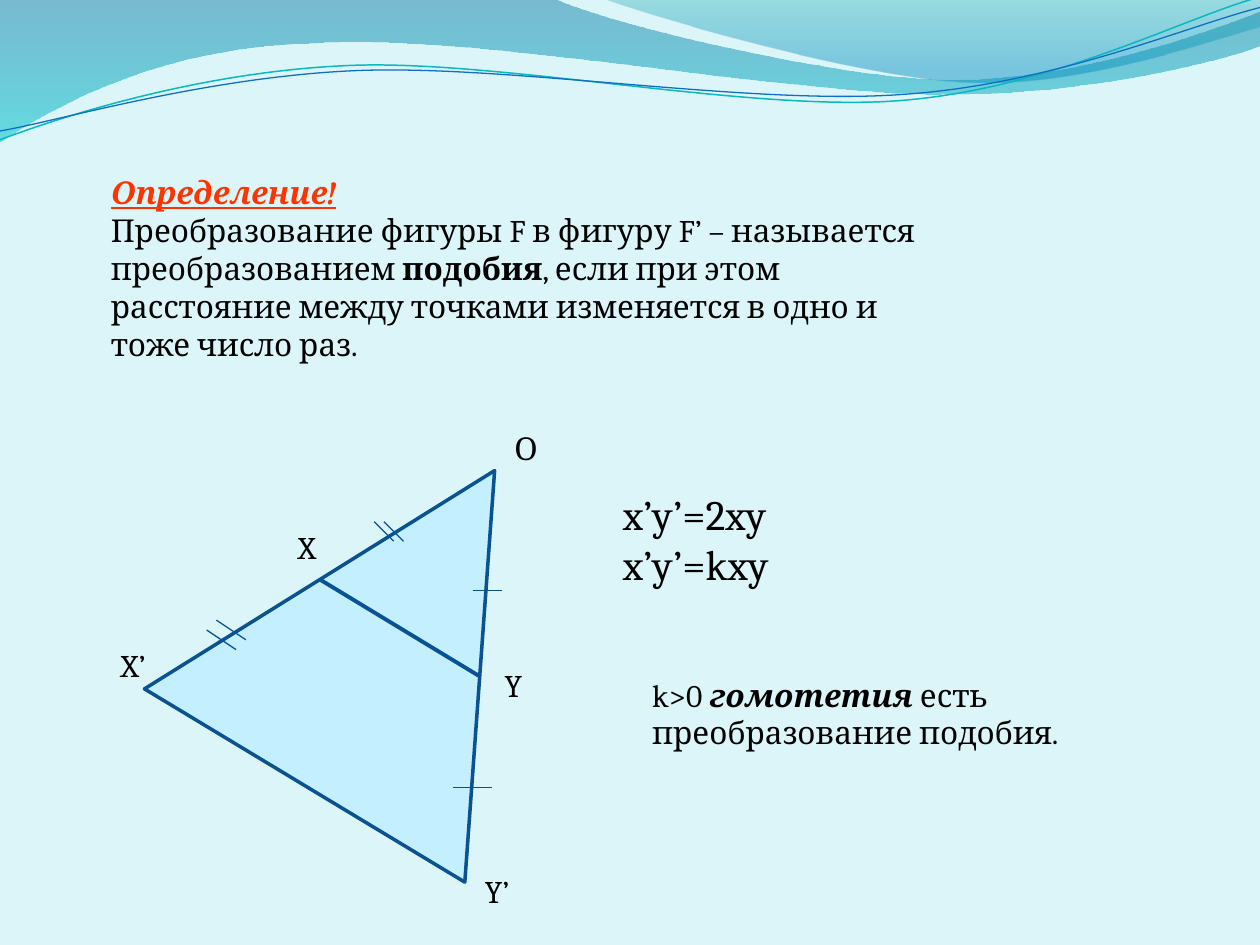
from typing import NamedTuple

from lxml.etree import SubElement
from pptx import Presentation
from pptx.dml.color import RGBColor
from pptx.enum.shapes import MSO_CONNECTOR, MSO_SHAPE
from pptx.oxml.ns import qn
from pptx.util import Pt

COLORS = {
    "background": "DBF5F9", "text": "000000", "accent": "FF3300",
    "triangle": "C4EFFF", "outline": "0B5292", "mark": "095295",
    "teal": "0AB8BF", "blue": "0F6FC6",
    "band_top": "0074A1", "band_bottom": "00C6CF",
    "crest_top": "00A1A9", "crest_bottom": "008BBF",
}


class Stop(NamedTuple):
    position: float
    color: str
    opacity: int


class Wave(NamedTuple):
    start: tuple
    segments: list
    stops: tuple = ()
    color: str = ""
    weight: float = 0
    rotation: float = 0


class Mark(NamedTuple):
    x: float
    y: float
    dx: float
    dy: float
    weight: float = 0.75
    count: int = 1
    step: tuple = (0, 0)


class Span(NamedTuple):
    text: str
    bold: bool = False
    italic: bool = False
    underline: bool = False
    color: str = "text"


class Caption(NamedTuple):
    box: tuple
    paragraphs: list
    size: float = 18


WAVES = [
    Wave((0, 0), [
        (316.8, -0.7),
        (342.7, 12.2, 478.1, 45.4, 545.8, 45.4),
        (614.2, 45.4, 689.8, 18.7, 720, 6.5),
        (720.7, 25.9),
        (707.8, 31.7, 626.4, 54.7, 537.1, 54),
        (447.8, 54, 275, 20.2, 185, 24.5),
        (92.2, 25.9, 33.1, 59.8, -0.7, 81.4),
        (0, 0),
    ], stops=(Stop(0, "band_top", 45), Stop(1, "band_bottom", 55))),
    Wave((344.9, -0.7), [
        (366.5, 7.9, 491, 44.6, 553.7, 46.8),
        (616.3, 49.7, 691.9, 23, 720, 15.1),
        (720, 0),
        (344.9, -0.7),
    ], stops=(Stop(0, "crest_top", 30), Stop(0.8, "crest_bottom", 45))),
    Wave((-1.4, 62.9), [
        (33.7, 51.6, 114, 29.4, 199.8, 29.9),
        (284.8, 30.3, 425.8, 67.2, 512.4, 64.8),
        (599, 62.4, 676.4, 25.7, 720.2, 15.6),
    ], color="teal", weight=0.85, rotation=357.3),
    Wave((-1.2, 57.9), [
        (33, 53.7, 118.3, 32.5, 204, 33),
        (290.5, 33.5, 428.9, 63.8, 515.5, 61.3),
        (601.4, 59.6, 678.5, 30.1, 721.4, 21.3),
    ], color="blue", weight=0.75, rotation=357.3),
]
MARKS = [
    Mark(182.9, 331.2, 91.4, 55.4, weight=2.25),
    Mark(213.8, 298.1, 11.2, 11.2, count=2, step=(5.6, 0)),
    Mark(118.1, 360, 16.8, 11.2, count=2, step=(5.6, -5.6)),
    Mark(270, 337.5, 16.8, 0),
    Mark(258.8, 450, 22.5, 0),
]
CAPTIONS = [
    Caption((56.2, 95.5, 483.8, 94.3), [
        [Span("Определение!", True, True, True, "accent")],
        [Span("Преобразование фигуры F в фигуру F’ – называется преобразованием "),
         Span("подобия", bold=True),
         Span(", если при этом расстояние между точками изменяется в одно и тоже число раз.")],
    ]),
    Caption((286.9, 241.9, 39.4, 28.8), [[Span("О")]]),
    Caption((270, 495, 33.8, 28.8), [[Span("Y’")]]),
    Caption((281.3, 376.9, 33.8, 28.8), [[Span("Y")]]),
    Caption((163.2, 298.1, 28.2, 28.8), [[Span("X")]]),
    Caption((61.9, 365.6, 39.4, 28.8), [[Span("X’")]]),
    Caption((348.8, 275.6, 202.3, 87.1),
            [[Span("x’y’=2xy")], [Span("x’y’=kxy")]], size=24),
    Caption((365.6, 382.5, 247.7, 51.1), [
        [Span("k>0 "), Span("гомотетия", True, True), Span(" есть преобразование подобия.")],
    ]),
]


def rgb(name: str) -> RGBColor:
    """Look up a palette colour."""
    return RGBColor.from_string(COLORS[name])


def bend(outline, segments: list) -> None:
    """Merge each three straight steps of a cubic segment into one curve."""
    steps = iter(list(outline.element.iter(qn("a:lnTo"))))
    for segment in segments:
        curve = next(steps)
        if len(segment) == 2:
            continue
        curve.tag = qn("a:cubicBezTo")
        for step in (next(steps), next(steps)):
            curve.append(step[0])
            step.getparent().remove(step)


def draw_wave(shapes, wave: Wave) -> None:
    """Draw a gradient band or a thin curve."""
    points = [(Pt(x), Pt(y)) for segment in wave.segments
              for x, y in zip(segment[::2], segment[1::2])]
    builder = shapes.build_freeform(*map(Pt, wave.start))
    builder.add_line_segments(points, close=bool(wave.stops))
    outline = builder.convert_to_shape()
    bend(outline, wave.segments)
    outline.rotation = wave.rotation
    outline.shadow.inherit = False
    if not wave.stops:
        outline.fill.background()
        outline.line.color.rgb = rgb(wave.color)
        outline.line.width = Pt(wave.weight)
        return
    outline.line.fill.background()
    outline.fill.gradient()
    outline.fill.gradient_angle = 270
    for target, stop in zip(outline.fill.gradient_stops, wave.stops):
        target.position = stop.position
        target.color.rgb = rgb(stop.color)
    for color, stop in zip(outline.element.spPr.iter(qn("a:srgbClr")), wave.stops):
        SubElement(color, qn("a:alpha")).set("val", str(stop.opacity * 1000))


def draw_triangle(shapes) -> None:
    """Draw the triangle with vertices O, X’ and Y’."""
    triangle = shapes.add_shape(MSO_SHAPE.ISOSCELES_TRIANGLE,
                                Pt(121.5), Pt(253.8), Pt(213.8), Pt(210.2))
    triangle.rotation = 31.1
    triangle.shadow.inherit = False
    triangle.fill.solid()
    triangle.fill.fore_color.rgb = rgb("triangle")
    triangle.line.color.rgb = rgb("outline")
    triangle.line.width = Pt(2)


def draw_mark(shapes, mark: Mark) -> None:
    """Draw a line, repeated at an even step."""
    for index in range(mark.count):
        x, y = mark.x + index * mark.step[0], mark.y + index * mark.step[1]
        stroke = shapes.add_connector(MSO_CONNECTOR.STRAIGHT, Pt(x), Pt(y),
                                      Pt(x + mark.dx), Pt(y + mark.dy))
        stroke.line.color.rgb = rgb("mark")
        stroke.line.width = Pt(mark.weight)
        SubElement(stroke._element.spPr, qn("a:effectLst"))


def draw_caption(shapes, caption: Caption) -> None:
    """Write paragraphs of formatted spans."""
    frame = shapes.add_textbox(*map(Pt, caption.box)).text_frame
    frame.word_wrap = True
    for index, spans in enumerate(caption.paragraphs):
        paragraph = frame.add_paragraph() if index else frame.paragraphs[0]
        for span in spans:
            run = paragraph.add_run()
            run.text = span.text
            font = run.font
            font.name, font.size = "Cambria", Pt(caption.size)
            font.bold, font.italic, font.underline = span.bold, span.italic, span.underline
            font.color.rgb = rgb(span.color)


def main() -> None:
    """Build the slide on similarity transformations."""
    deck = Presentation()
    deck.slide_width, deck.slide_height = Pt(720), Pt(540)
    slide = deck.slides.add_slide(deck.slide_layouts[6])
    slide.background.fill.solid()
    slide.background.fill.fore_color.rgb = rgb("background")
    for wave in WAVES:
        draw_wave(slide.shapes, wave)
    draw_triangle(slide.shapes)
    for mark in MARKS:
        draw_mark(slide.shapes, mark)
    for caption in CAPTIONS:
        draw_caption(slide.shapes, caption)
    deck.save("out.pptx")


if __name__ == "__main__":
    main()
